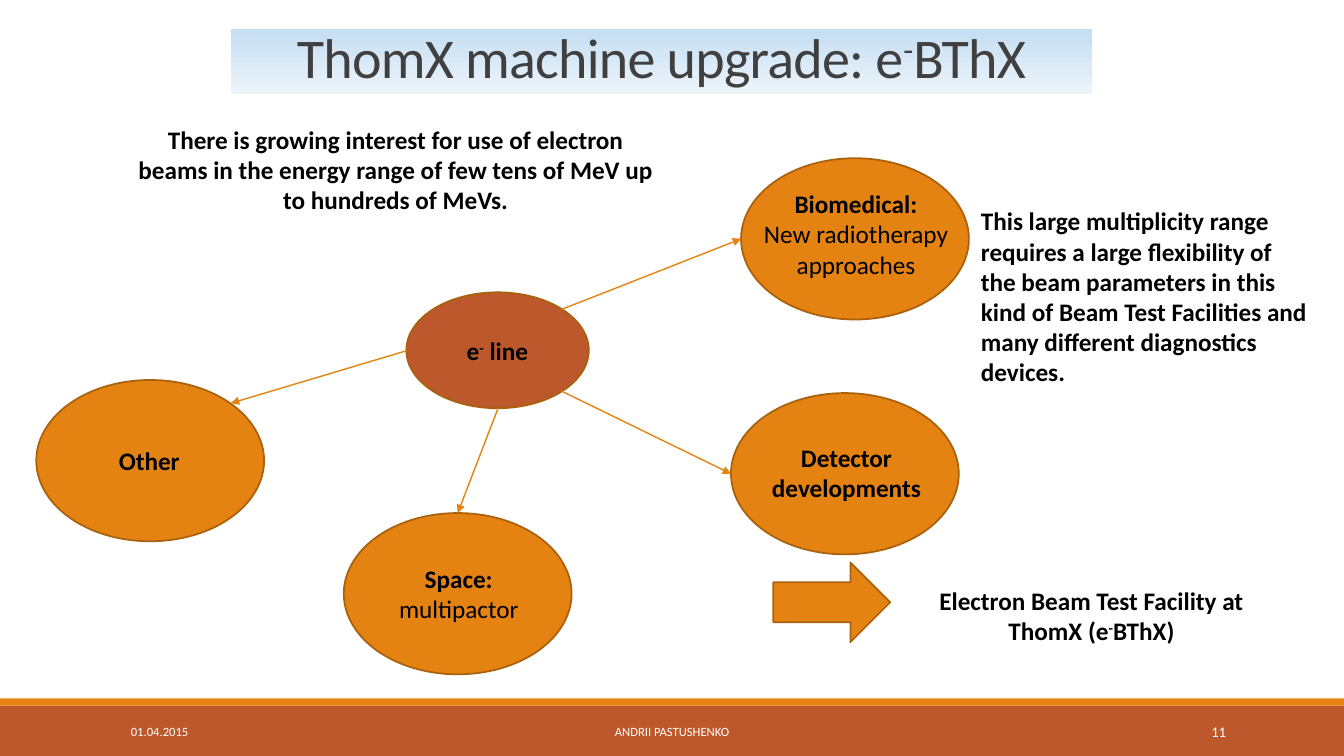
from dataclasses import dataclass

from lxml import etree
from pptx import Presentation
from pptx import util as u
from pptx.dml.color import RGBColor
from pptx.enum import shapes, text
from pptx.oxml import ns

PX = u.Inches(0.01)
FONT = "Calibri"
ORANGE = RGBColor(0xE4, 0x83, 0x12)
RUST = RGBColor(0xBD, 0x58, 0x2C)
OUTLINE = RGBColor(0xA9, 0x61, 0x0D)
BLACK = RGBColor(0, 0, 0)
WHITE = RGBColor(0xFF, 0xFF, 0xFF)
TITLE_GREY = RGBColor(0x40, 0x40, 0x40)
BANNER_TOP = RGBColor(0xC5, 0xDE, 0xF2)
BANNER_BOTTOM = RGBColor(0xEC, 0xF4, 0xFA)

LEFT, CENTER, RIGHT = text.PP_ALIGN.LEFT, text.PP_ALIGN.CENTER, text.PP_ALIGN.RIGHT
TOP, MIDDLE = text.MSO_ANCHOR.TOP, text.MSO_ANCHOR.MIDDLE
RECTANGLE = shapes.MSO_SHAPE.RECTANGLE
OVAL = shapes.MSO_SHAPE.OVAL
RIGHT_ARROW = shapes.MSO_SHAPE.RIGHT_ARROW

# Places on an oval's rim, as fractions of its half width and half height
DIAGONAL = 0.5 ** 0.5
RIM = {
    "left": (-1, 0),
    "bottom": (0, 1),
    "top": (0, -1),
    "upper right": (DIAGONAL, -DIAGONAL),
    "lower right": (DIAGONAL, DIAGONAL),
}


@dataclass(frozen=True)
class Box:
    left: int
    top: int
    width: int
    height: int

    def emu(self) -> tuple[int, ...]:
        return tuple(n * PX for n in (self.left, self.top, self.width, self.height))

    def rim(self, place: str) -> tuple[int, int]:
        """Point in EMU on the oval that fills this box."""
        across, down = RIM[place]
        x = self.left + self.width * (1 + across) / 2
        y = self.top + self.height * (1 + down) / 2
        return round(x) * PX, round(y) * PX


@dataclass(frozen=True)
class Label:
    """Text whose first paragraph may be bold; ^ marks both ends of a superscript."""
    box: Box
    paragraphs: tuple[str, ...]
    align: text.PP_ALIGN = CENTER
    size: float = 18
    color: RGBColor = BLACK
    bold: bool = True
    anchor: text.MSO_ANCHOR = TOP


@dataclass(frozen=True)
class Application:
    oval: Box
    label: Label
    leaves: str
    arrives: str


@dataclass(frozen=True)
class Block:
    kind: shapes.MSO_SHAPE
    box: Box
    fill: RGBColor
    outlined: bool = True


ELECTRON_LINE = Box(403, 290, 181, 115)

APPLICATIONS = (
    Application(Box(735, 157, 226, 160),
                Label(Box(747, 182, 204, 101),
                      ("Biomedical:", "New radiotherapy approaches")),
                "upper right", "left"),
    Application(Box(725, 390, 226, 160),
                Label(Box(747, 434, 185, 71), ("Detector developments",)),
                "lower right", "left"),
    Application(Box(341, 509, 226, 160),
                Label(Box(372, 554, 166, 71), ("Space:", "multipactor")),
                "bottom", "top"),
    Application(Box(36, 377, 226, 160),
                Label(Box(72, 437, 152, 40), ("Other",)),
                "left", "upper right"),
)

BLOCKS = (
    Block(RECTANGLE, Box(0, 700, 1333, 50), RUST, outlined=False),
    Block(RECTANGLE, Box(0, 693, 1333, 7), ORANGE, outlined=False),
    Block(OVAL, ELECTRON_LINE, RUST),
    *(Block(OVAL, application.oval, ORANGE) for application in APPLICATIONS),
    Block(RIGHT_ARROW, Box(767, 558, 116, 79), ORANGE),
)

LABELS = (
    Label(Box(120, 706, 270, 40), ("01.04.2015",), LEFT, 9, WHITE, False, MIDDLE),
    Label(Box(403, 706, 527, 40), ("ANDRII PASTUSHENKO",), CENTER, 9, WHITE, False, MIDDLE),
    Label(Box(1083, 706, 143, 40), ("11",), RIGHT, 10.5, WHITE, False, MIDDLE),
    Label(Box(126, 118, 533, 101),
          ("There is growing interest for use of electron beams in the energy "
           "range of few tens of MeV up to hundreds of MeVs.",)),
    Label(Box(453, 328, 85, 40), ("e^-^ line",), LEFT),
    *(application.label for application in APPLICATIONS),
    Label(Box(963, 199, 348, 192),
          ("This large multiplicity range requires a large flexibility of the beam "
           "parameters in this kind of Beam Test Facilities and many different "
           "diagnostics devices.",), LEFT),
    Label(Box(883, 576, 399, 71),
          ("Electron Beam Test Facility at ThomX (e^-^BThX)",)),
)

TITLE = Label(Box(229, 29, 854, 64), ("ThomX machine upgrade: e^-^BThX",),
              CENTER, 40, TITLE_GREY, False, MIDDLE)


def write(frame, label: Label) -> None:
    frame_format = {"word_wrap": True, "vertical_anchor": label.anchor,
                    "auto_size": text.MSO_AUTO_SIZE.NONE}
    for name, value in frame_format.items():
        setattr(frame, name, value)
    for number, content in enumerate(label.paragraphs):
        paragraph = frame.add_paragraph() if number else frame.paragraphs[0]
        paragraph.alignment = label.align
        font_format = {"name": FONT, "size": u.Pt(label.size),
                       "bold": label.bold and number == 0}
        for part, words in enumerate(content.split("^")):
            run = paragraph.add_run()
            run.text = words
            for name, value in font_format.items():
                setattr(run.font, name, value)
            run.font.color.rgb = label.color
            if part % 2:
                run.font._element.set("baseline", "30000")


def add_title(slide) -> None:
    title = slide.shapes.title
    title.left, title.top, title.width, title.height = TITLE.box.emu()
    title.fill.gradient()
    title.fill.gradient_angle = 270
    for stop, color in zip(title.fill.gradient_stops, (BANNER_TOP, BANNER_BOTTOM)):
        stop.color.rgb = color
    write(title.text_frame, TITLE)
    heading = title.text_frame.paragraphs[0]
    heading.line_spacing = 0.85
    for run in heading.runs:
        run.font._element.set("spc", "-50")


def add_block(slide, block: Block) -> None:
    shape = slide.shapes.add_shape(block.kind, *block.box.emu())
    shape.shadow.inherit = False
    shape.fill.solid()
    shape.fill.fore_color.rgb = block.fill
    if block.outlined:
        shape.line.color.rgb = OUTLINE
        shape.line.width = u.Pt(1.25)
    else:
        shape.line.fill.background()


def add_arrow(slide, application: Application) -> None:
    arrow = slide.shapes.add_connector(
        shapes.MSO_CONNECTOR.STRAIGHT,
        *ELECTRON_LINE.rim(application.leaves),
        *application.oval.rim(application.arrives))
    arrow.line.color.rgb = ORANGE
    arrow.line.width = u.Pt(1)
    etree.SubElement(arrow.line._get_or_add_ln(), ns.qn("a:tailEnd"), type="triangle")
    etree.SubElement(arrow._element.spPr, ns.qn("a:effectLst"))


def main() -> None:
    deck = Presentation()
    deck.slide_width, deck.slide_height = 1333 * PX, 750 * PX
    slide = deck.slides.add_slide(deck.slide_layouts.get_by_name("Title Only"))
    add_title(slide)
    for block in BLOCKS:
        add_block(slide, block)
    for application in APPLICATIONS:
        add_arrow(slide, application)
    for label in LABELS:
        write(slide.shapes.add_textbox(*label.box.emu()).text_frame, label)
    deck.save("out.pptx")


if __name__ == "__main__":
    main()
